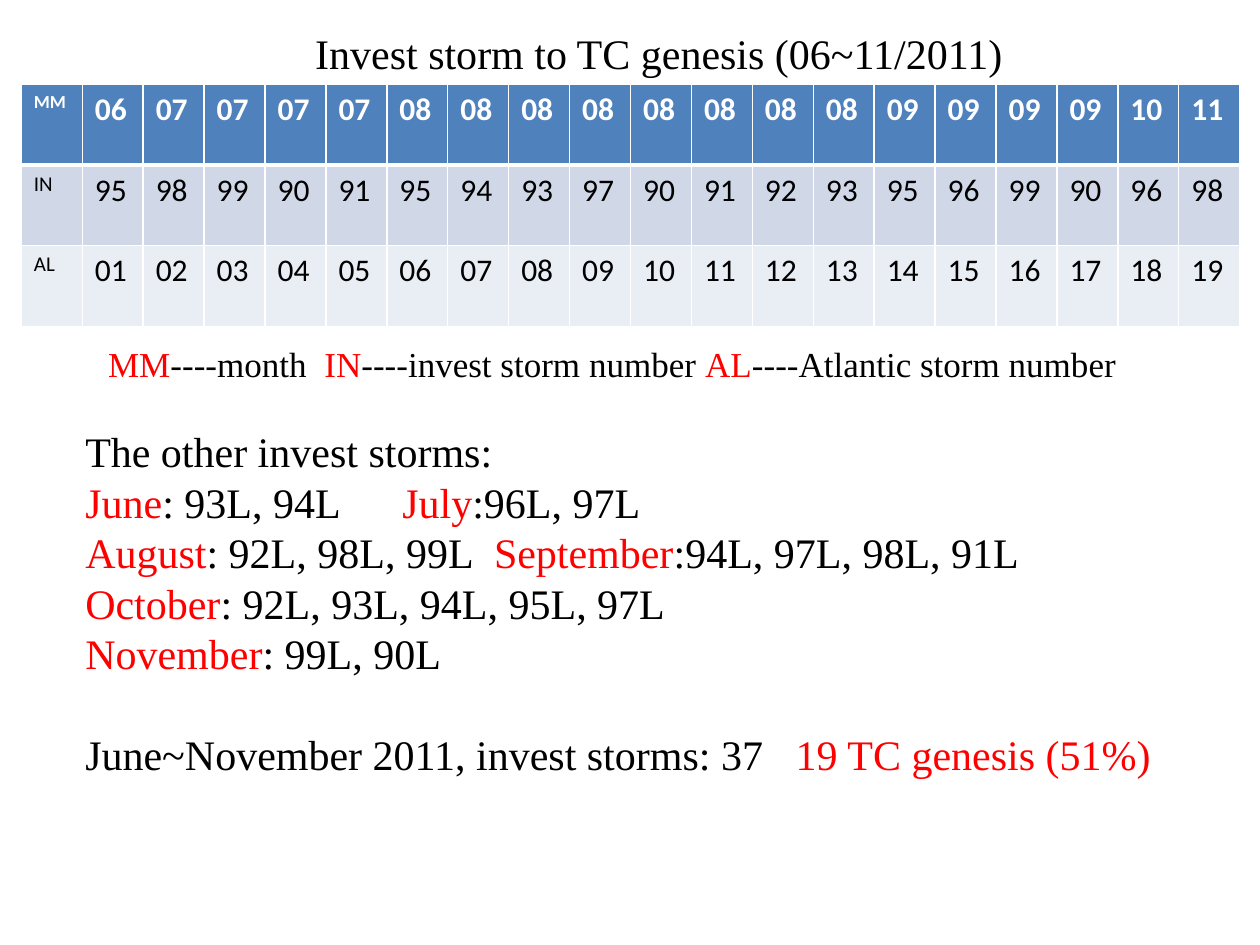
from lxml.etree import SubElement as Sub
from pptx import Presentation
from pptx.dml.color import RGBColor as Rgb
from pptx.enum.text import MSO_ANCHOR as Anchor, MSO_AUTO_SIZE as Fit, PP_ALIGN as Align
from pptx.oxml.ns import qn
from pptx.util import Cm, Pt

HUES = {"ink": "000000", "red": "FF0000", "white": "FFFFFF",
        "head": "4F81BD", "odd": "D0D8E8", "even": "E9EDF4"}
SERIF = "Times New Roman"

STORMS = [
    ["MM", *"06 07 07 07 07 08 08 08 08 08 08 08 08 09 09 09 09 10 11".split()],
    ["IN", *"95 98 99 90 91 95 94 93 97 90 91 92 93 95 96 99 90 96 98".split()],
    ["AL", *[f"{num:02d}" for num in range(1, 20)]],
]
ROWS = [("head", "white", 10.5, True), ("odd", "ink", 12, False), ("even", "ink", 12, False)]

KEY = [([("MM", "red"), ("----month\t", "ink"), ("IN", "red"),
         ("----invest storm number ", "ink"), ("AL", "red"),
         ("----Atlantic storm number", "ink")], 4.36, 0)]
OTHERS = [
    ([("The other invest storms:", "ink")], None, 0),
    ([("June", "red"), (": 93L, 94L\t", "ink"), ("July", "red"), (":96L, 97L", "ink")], 6.39, 0),
    ([("August", "red"), (": 92L, 98L, 99L\t", "ink"), ("September", "red"),
      (":94L, 97L, 98L, 91L", "ink")], 8.24, 0),
    ([("October", "red"), (": 92L, 93L, 94L, 95L, 97L", "ink")], None, 0),
    ([("November", "red"), (": 99L, 90L", "ink")], None, 0),
    ([("June~November 2011, invest storms: 37\t", "ink"),
      ("19 TC genesis (51%)", "red")], 14.32, 28.8),
]


def style(run, face, size, hue, bold=False):
    """Set the font of one run."""
    font = run.font
    font.name, font.size, font.bold = face, Pt(size), bold
    font.color.rgb = Rgb.from_string(HUES[hue])


def edge(cell, side, width):
    """Draw one white border of a cell."""
    line = Sub(cell._tc.get_or_add_tcPr(), qn(f"a:ln{side}"), w=str(Pt(width)))
    fill = Sub(line, qn("a:solidFill"))
    Sub(fill, qn("a:srgbClr"), val=HUES["white"])


def add_title(slide, box, text):
    """Place and format the slide title."""
    title = slide.shapes.title
    title.left, title.top, title.width, title.height = map(Cm, box)
    frame = title.text_frame
    frame.text = text
    frame.auto_size = Fit.NONE
    frame.vertical_anchor = Anchor.TOP
    para = frame.paragraphs[0]
    para.alignment = Align.LEFT
    para.line_spacing = Pt(28.8)
    style(para.runs[0], SERIF, 24, "ink")


def add_grid(slide, box):
    """Build the storm table with equal rows and columns."""
    grid = slide.shapes.add_table(len(STORMS), len(STORMS[0]), *map(Cm, box)).table
    for y, (texts, (back, hue, small, bold)) in enumerate(zip(STORMS, ROWS)):
        for x, text in enumerate(texts):
            cell = grid.cell(y, x)
            for side in "LRTB":
                thick = (y, side) in ((0, "B"), (1, "T"))
                edge(cell, side, 3 if thick else 1)
            cell.fill.solid()
            cell.fill.fore_color.rgb = Rgb.from_string(HUES[back])
            cell.text_frame.text = text
            run = cell.text_frame.paragraphs[0].runs[0]
            style(run, "Calibri", 18 if x else small, hue, bold)


def add_notes(slide, box, lines, size):
    """Write lines of two-coloured text, each with an optional tab stop."""
    frame = slide.shapes.add_textbox(*map(Cm, box)).text_frame
    frame.word_wrap = True
    for at, (parts, stop, gap) in enumerate(lines):
        para = frame.add_paragraph() if at else frame.paragraphs[0]
        para.line_spacing = Pt(size * 1.2)
        para.space_before = Pt(gap)
        if stop:
            tabs = Sub(para._p.get_or_add_pPr(), qn("a:tabLst"))
            Sub(tabs, qn("a:tab"), pos=str(Cm(stop)), algn="l")
        for text, hue in parts:
            run = para.add_run()
            run.text = text
            style(run, SERIF, size, hue)


def main():
    """Build and save the slide."""
    deck = Presentation()
    deck.slide_width, deck.slide_height = Cm(25.4), Cm(19.05)
    slide = deck.slides.add_slide(deck.slide_layouts[5])
    add_grid(slide, (0.43, 1.7, 24.56, 4.88))
    add_notes(slide, (1.93, 6.78, 21, 1.12), KEY, 20)
    add_notes(slide, (1.47, 8.46, 22.43, 7.42), OTHERS, 24)
    add_title(slide, (6.1, 0.43, 17.2, 1.3), "Invest storm to TC genesis (06~11/2011)")
    deck.save("out.pptx")


if __name__ == "__main__":
    main()
